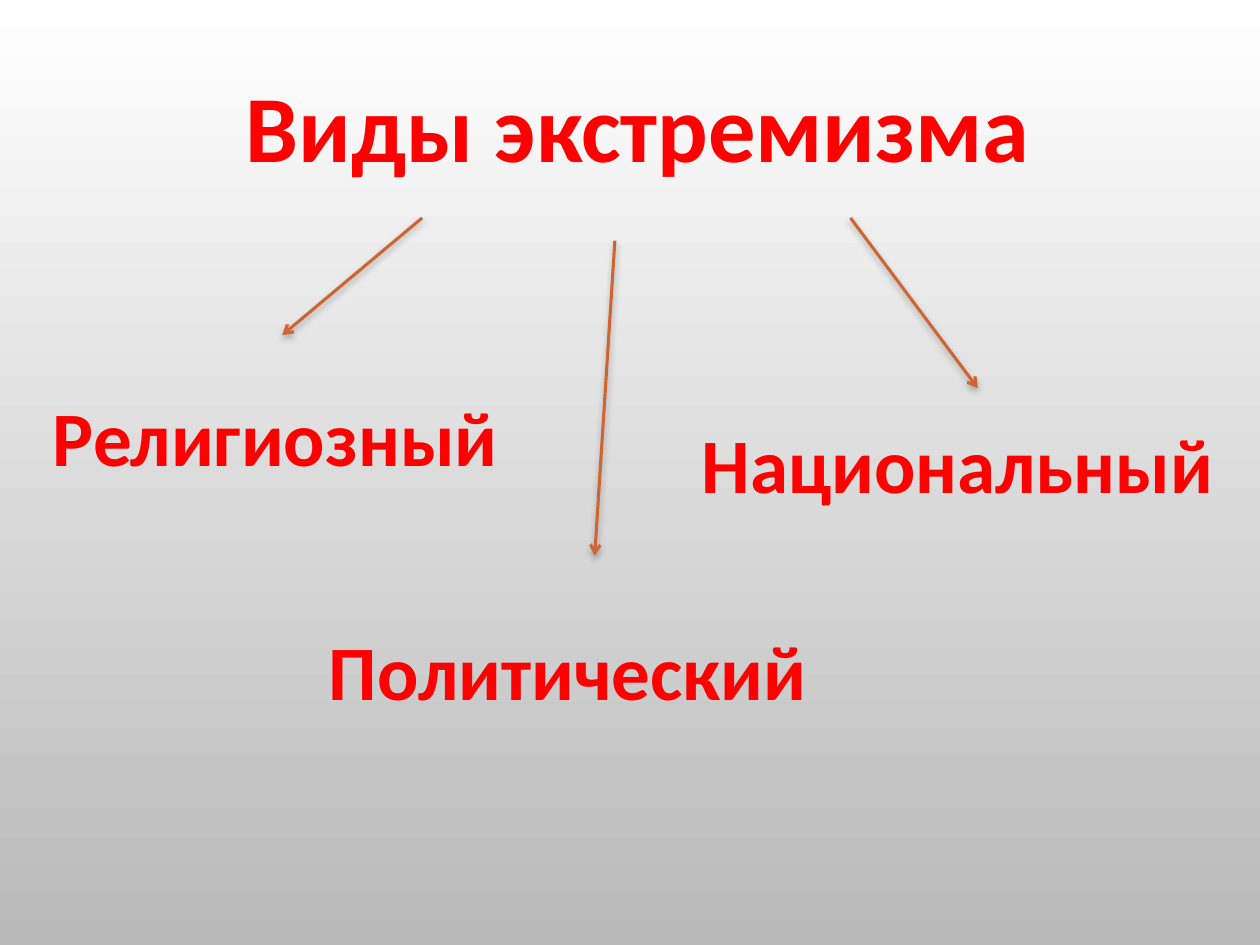
from lxml import etree
from pptx import Presentation
from pptx.dml.color import RGBColor
from pptx.enum.shapes import MSO_CONNECTOR
from pptx.enum.text import MSO_ANCHOR, MSO_AUTO_SIZE, PP_ALIGN
from pptx.oxml import parse_xml
from pptx.oxml.ns import nsdecls, qn
from pptx.util import Inches, Pt

STRAIGHT = MSO_CONNECTOR.STRAIGHT
TOP = MSO_ANCHOR.TOP
GROW = MSO_AUTO_SIZE.SHAPE_TO_FIT_TEXT
LEFT = PP_ALIGN.LEFT

FONT = "Calibri"
COLORS = {
    "text": "FF0000",
    "arrow": "CE6633",
    "shadow": "000000",
    "bg_top": "FFFFFF",
    "bg_bottom": "B9B9B9",
}

TITLE = ("Виды экстремизма", (1.85, 0.49, 6.8, 1.01))
KINDS = [
    # label, label box, arrow start, arrow end
    ("Религиозный", (0.32, 3.04, 3.85, 0.84), (3.35, 1.73), (2.24, 2.66)),
    ("Политический", (2.51, 4.9, 4.15, 0.84), (4.88, 1.91), (4.72, 4.41)),
    ("Национальный", (5.47, 3.26, 4.39, 0.84), (6.75, 1.73), (7.76, 3.08)),
]


def rgb(name):
    return RGBColor.from_string(COLORS[name])


def set_background(slide):
    fill = slide.background.fill
    fill.gradient()
    fill.gradient_angle = 270  # counter-clockwise: runs from top to bottom
    for stop, name in zip(fill.gradient_stops, ("bg_top", "bg_bottom")):
        stop.color.rgb = rgb(name)


def write_text(sp, text, size, wrap):
    tf = sp.text_frame
    tf.text = text
    tf.word_wrap = wrap
    tf.auto_size = GROW
    tf.vertical_anchor = TOP
    p = tf.paragraphs[0]
    p.alignment = LEFT
    p.font.name = FONT
    p.font.size = Pt(size)
    p.font.bold = True
    p.font.color.rgb = rgb("text")


def add_title(slide, text, box):
    sp = slide.shapes.title
    sp.left, sp.top, sp.width, sp.height = map(Inches, box)
    write_text(sp, text, 54, True)


def add_label(slide, text, box):
    sp = slide.shapes.add_textbox(*map(Inches, box))
    write_text(sp, text, 44, False)


def add_arrow(slide, start, end):
    """Arrow with an open head at its end and a soft shadow below."""
    line = slide.shapes.add_connector(STRAIGHT, *map(Inches, start + end))
    line.line.color.rgb = rgb("arrow")
    line.line.width = Pt(1.75)
    sp_pr = line._element.spPr
    etree.SubElement(sp_pr.find(qn("a:ln")), qn("a:tailEnd"), type="arrow")
    sp_pr.append(parse_xml(
        f'<a:effectLst {nsdecls("a")}>'
        f'<a:outerShdw blurRad="{Pt(4)}" dist="{Pt(2)}" dir="5400000" rotWithShape="0">'
        f'<a:srgbClr val="{COLORS["shadow"]}"><a:alpha val="28000"/></a:srgbClr>'
        '</a:outerShdw></a:effectLst>'))


def main():
    prs = Presentation()
    prs.slide_width, prs.slide_height = Inches(10), Inches(7.5)
    slide = prs.slides.add_slide(prs.slide_layouts.get_by_name("Title Only"))
    set_background(slide)
    add_title(slide, *TITLE)
    for text, box, start, end in KINDS:
        add_arrow(slide, start, end)
        add_label(slide, text, box)
    prs.save("out.pptx")


if __name__ == "__main__":
    main()
